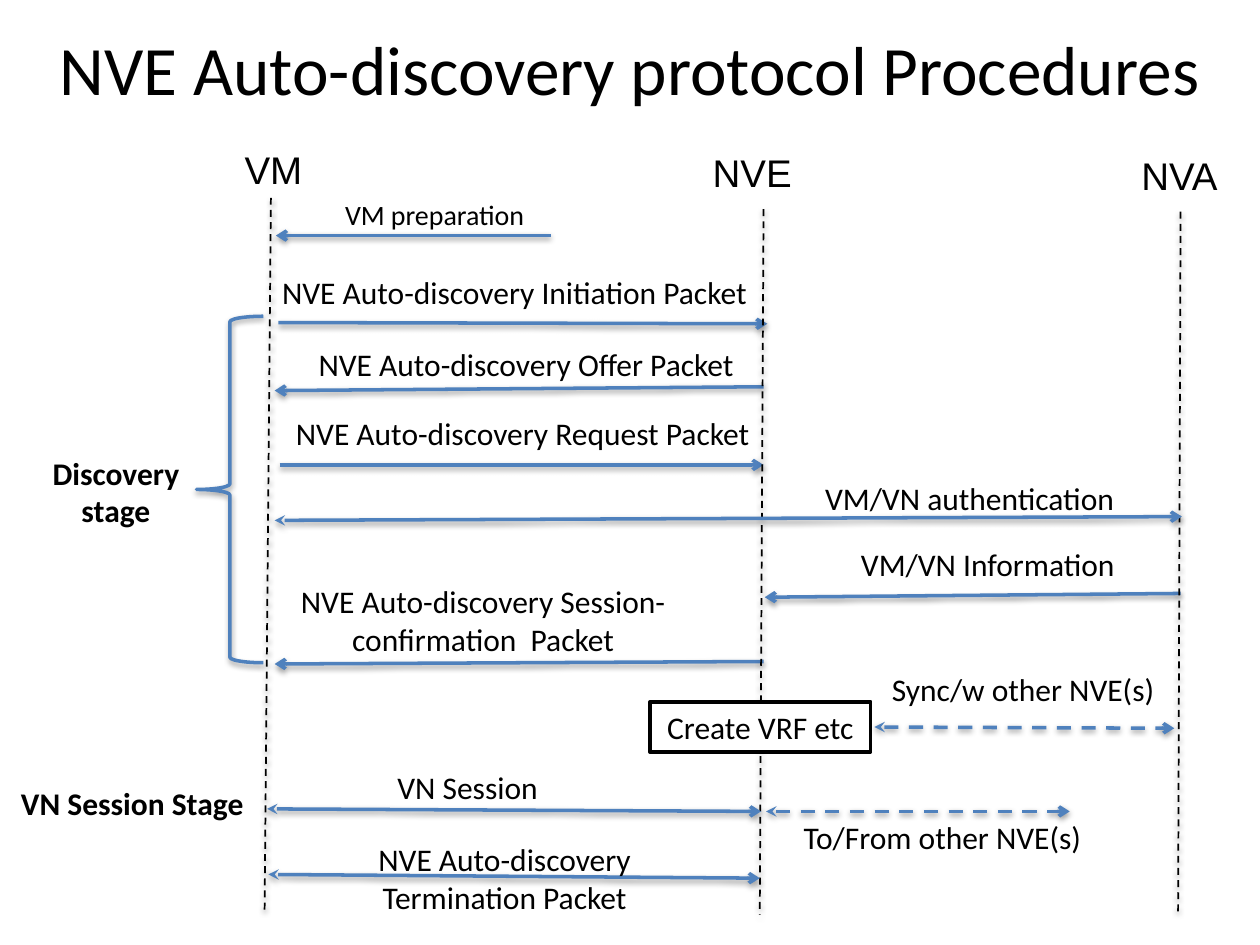
from lxml.etree import SubElement
from pptx import Presentation
from pptx.dml.color import RGBColor
from pptx.enum.dml import MSO_LINE
from pptx.enum.shapes import MSO_CONNECTOR, MSO_SHAPE
from pptx.enum.text import MSO_ANCHOR, MSO_AUTO_SIZE, PP_ALIGN
from pptx.oxml.ns import qn
from pptx.util import Inches, Pt

theme = {
    "black": RGBColor(0, 0, 0),
    "white": RGBColor(255, 255, 255),
    "blue": RGBColor(0x4F, 0x81, 0xBD),
    "body": "Calibri",
    "actor": "Arial",
    "title size": Pt(39.6),
    "actor size": Pt(22),
    "label size": Pt(18),
    "small size": Pt(16),
    "stroke": Pt(2),
    "thin": Pt(1),
}

deck = Presentation()
deck.slide_width, deck.slide_height = Inches(10), Inches(7.5)
page = deck.slides.add_slide(deck.slide_layouts[6])
column = deck.slide_width / 100
row = deck.slide_height / 75


def write(box, text, wrap=True, align=PP_ALIGN.CENTER, size="label size", face="body", bold=False):
    frame = box.text_frame
    settings = {
        "word_wrap": wrap,
        "auto_size": MSO_AUTO_SIZE.SHAPE_TO_FIT_TEXT,
        "vertical_anchor": MSO_ANCHOR.TOP,
    }
    for name, value in settings.items():
        setattr(frame, name, value)
    para = frame.paragraphs[0]
    para.alignment = align
    span = para.add_run()
    span.text = text
    for name, value in {"name": theme[face], "size": theme[size], "bold": bold}.items():
        setattr(span.font, name, value)
    span.font.color.rgb = theme["black"]


def draw_stroke(shape, color, width, dashed=False, ends=()):
    shape.line.color.rgb = theme[color]
    shape.line.width = theme[width]
    if dashed:
        shape.line.dash_style = MSO_LINE.DASH
    properties = shape._element.spPr
    outline = properties.find(qn("a:ln"))
    for end, kind in ends:
        SubElement(outline, qn(f"a:{end}"), type=kind)
    effects = SubElement(properties, qn("a:effectLst"))
    shadow = SubElement(effects, qn("a:outerShdw"), blurRad="40000", dist="20000", dir="5400000", rotWithShape="0")
    tint = SubElement(shadow, qn("a:srgbClr"), val="000000")
    SubElement(tint, qn("a:alpha"), val="38000")


title = page.shapes.add_textbox(int(1.9 * column), 2 * row, int(96.2 * column), int(6.8 * row))
write(title, "NVE Auto-discovery protocol Procedures", size="title size")
title.text_frame.auto_size = MSO_AUTO_SIZE.NONE
title.text_frame.vertical_anchor = MSO_ANCHOR.MIDDLE

one_way = [("tailEnd", "arrow")]
two_way = [("headEnd", "stealth"), ("tailEnd", "arrow")]
message = {"color": "blue", "width": "stroke", "ends": one_way}
exchange = {"color": "blue", "width": "stroke", "ends": two_way}
sync = {**exchange, "dashed": True}
lifeline = {"color": "black", "width": "thin", "dashed": True}
lines = [
    (22.1, 25.6, 60.9, 25.7, message),
    (60.6, 30.7, 21.8, 31, message),
    (22.2, 36.9, 60.6, 36.9, message),
    (60.6, 52.5, 21.8, 52.7, message),
    (93.7, 47.1, 60.7, 47.4, message),
    (21.5, 15.7, 21, 72.2, lifeline),
    (60.6, 16.6, 60.3, 72.6, lifeline),
    (93.7, 16.8, 93.5, 72.5, lifeline),
    (43.7, 18.7, 21.9, 18.7, message),
    (69.4, 57.7, 93.2, 57.8, sync),
    (21.2, 64.2, 60.4, 64.4, exchange),
    (21.3, 69.4, 60.3, 69.7, exchange),
    (60.8, 64.4, 84.9, 64.4, sync),
    (21.8, 41.3, 93.8, 41, exchange),
]
for x1, y1, x2, y2, style in lines:
    line = page.shapes.add_connector(
        MSO_CONNECTOR.STRAIGHT, int(x1 * column), int(y1 * row), int(x2 * column), int(y2 * row)
    )
    draw_stroke(line, **style)

brace = page.shapes.add_shape(
    MSO_SHAPE.LEFT_BRACE, int(15.6 * column), int(25.1 * row), int(5.3 * column), int(27.5 * row)
)
brace.fill.background()
draw_stroke(brace, "blue", "stroke")

step = page.shapes.add_shape(
    MSO_SHAPE.RECTANGLE, int(51.6 * column), int(55.7 * row), int(17.5 * column), 4 * row
)
step.shadow.inherit = False
step.fill.solid()
step.fill.fore_color.rgb = theme["white"]
step.line.color.rgb = theme["black"]
step.line.width = theme["stroke"]
write(step, "Create VRF etc")

actor = {"size": "actor size", "face": "actor"}
left = {"wrap": False, "align": PP_ALIGN.LEFT}
centred = {"wrap": False}
stage = {"bold": True}
labels = [
    ("VM", 17.5, 11.1, 8.4, 4.7, actor),
    ("NVE", 55.5, 11.3, 8.4, 4.7, actor),
    ("NVA", 89.4, 11.6, 8.4, 4.7, actor),
    ("VM preparation", 23.7, 15.2, 21.6, 3.7, {"size": "small size"}),
    ("NVE Auto-discovery Initiation Packet", 21.4, 21.2, 39.3, 4, left),
    ("NVE Auto-discovery Offer Packet", 24.3, 26.9, 35.4, 4, left),
    ("NVE Auto-discovery Request Packet", 22.5, 32.4, 38.4, 4, left),
    ("NVE Auto-discovery Session-confirmation  Packet", 22.5, 45.7, 31.7, 7.1, {}),
    ("VM/VN authentication", 63.9, 37.5, 26.1, 4, centred),
    ("VM/VN Information", 67.2, 42.8, 22.4, 4, centred),
    ("Sync/w other NVE(s)", 69.8, 52.7, 23.5, 4, left),
    ("VN Session ", 26.6, 60.5, 21.6, 4, {}),
    ("To/From other NVE(s)", 62.8, 64.4, 24.3, 4, left),
    ("NVE Auto-discovery Termination Packet", 25.6, 66.2, 28.9, 7.1, {}),
    ("VN Session Stage", 0, 61.7, 21, 4, stage),
    ("Discovery stage", 2.5, 35.5, 13.4, 7.1, stage),
]
for text, x, y, width, height, style in labels:
    box = page.shapes.add_textbox(int(x * column), int(y * row), int(width * column), int(height * row))
    write(box, text, **style)

deck.save("out.pptx")
